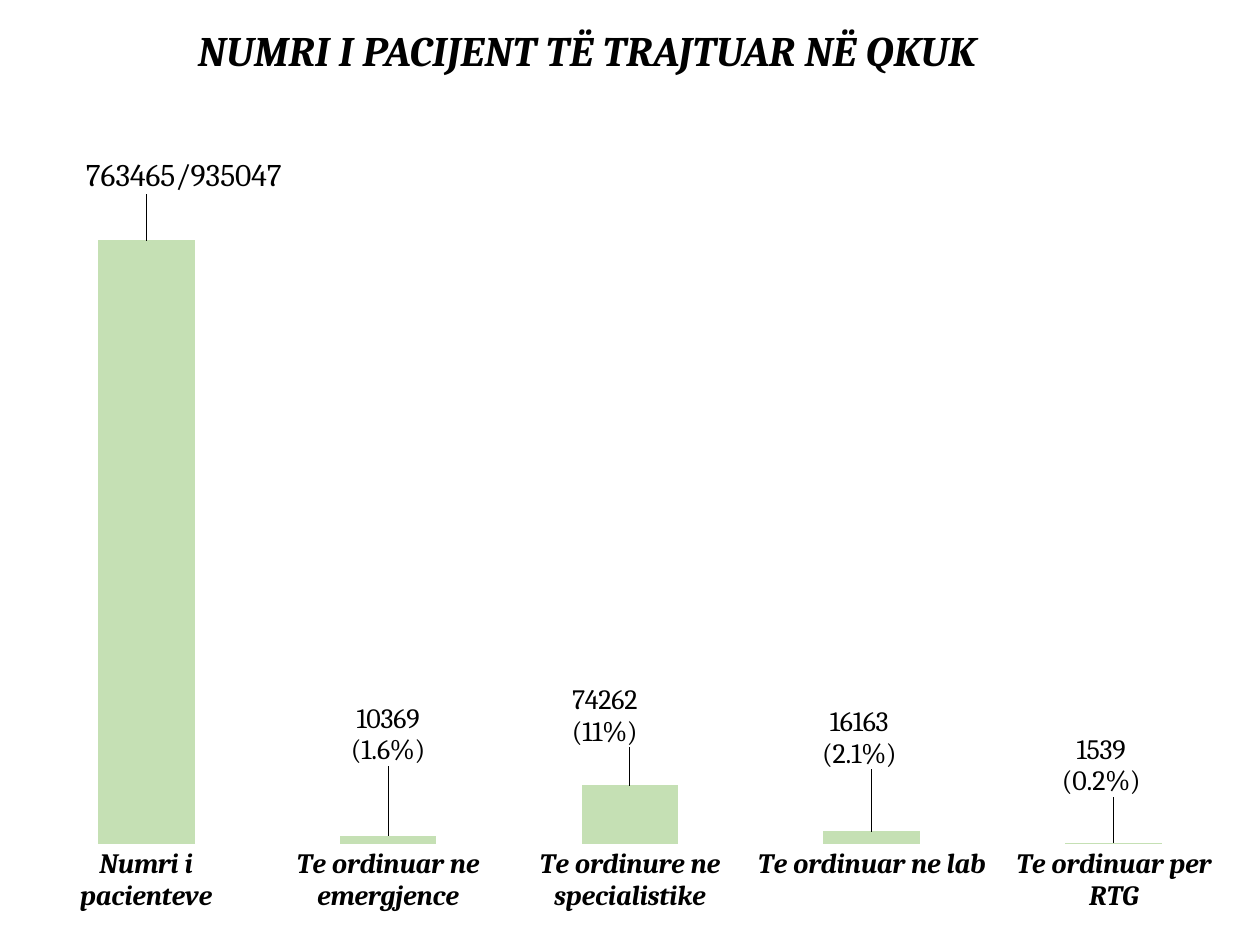
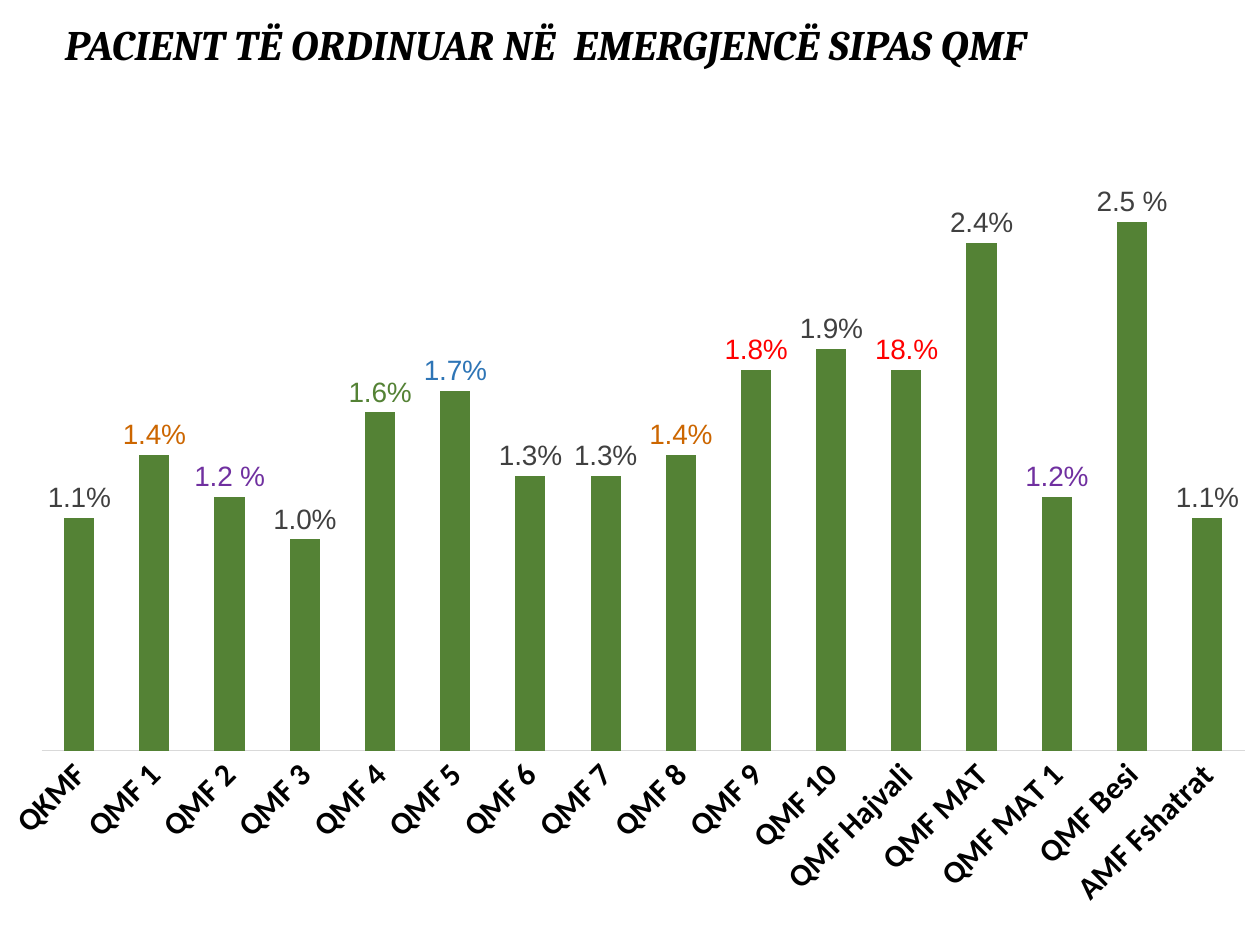
from dataclasses import dataclass

from lxml.etree import SubElement
from pptx import Presentation
from pptx.chart.data import CategoryChartData
from pptx.dml.color import RGBColor
from pptx.enum.chart import XL_CHART_TYPE, XL_LABEL_POSITION, XL_TICK_MARK
from pptx.enum.text import MSO_ANCHOR, MSO_AUTO_SIZE, PP_ALIGN
from pptx.oxml import parse_xml
from pptx.oxml.ns import nsdecls, qn
from pptx.util import Emu, Pt

PX_PER_INCH = 126
SLIDE_W, SLIDE_H = 1260, 945


@dataclass(frozen=True)
class Theme:
    serif: str = "Cambria"
    sans: str = "Calibri"
    label_sans: str = "Arial"
    black: str = "000000"
    grey: str = "404040"
    axis: str = "D9D9D9"
    light_green: str = "C5E0B4"
    green: str = "548235"
    orange: str = "CC6600"
    purple: str = "7030A0"
    blue: str = "2E75B6"
    red: str = "FF0000"
    title: int = 24
    large: int = 18
    body: int = 16
    small: int = 10


THEME = Theme()

# Category, patients, label, label size, label shift in px (right, down)
PATIENTS = [
    ("Numri i pacienteve", 763465, "763465/935047", THEME.large, (35, -40)),
    ("Te ordinuar ne emergjence", 10369, "10369\n(1.6%)", THEME.body, (0, -62)),
    ("Te ordinure ne specialistike", 74262, "74262\n(11%)", THEME.body, (-20, -30)),
    ("Te ordinuar ne lab", 16163, "16163\n(2.1%)", THEME.body, (-11, -58)),
    ("Te ordinuar per RTG", 1539, "1539\n(0.2%)", THEME.body, (-15, -40)),
]

# Centre, share in percent, label, label colour
EMERGENCY = [
    ("QKMF", 1.1, "1.1%", THEME.grey),
    ("QMF 1", 1.4, "1.4%", THEME.orange),
    ("QMF 2", 1.2, "1.2 %", THEME.purple),
    ("QMF 3", 1.0, "1.0%", THEME.grey),
    ("QMF 4", 1.6, "1.6%", THEME.green),
    ("QMF 5", 1.7, "1.7%", THEME.blue),
    ("QMF 6", 1.3, "1.3%", THEME.grey),
    ("QMF 7", 1.3, "1.3%", THEME.grey),
    ("QMF 8", 1.4, "1.4%", THEME.orange),
    ("QMF 9", 1.8, "1.8%", THEME.red),
    ("QMF 10", 1.9, "1.9%", THEME.grey),
    ("QMF Hajvali", 1.8, "18.%", THEME.red),
    ("QMF MAT", 2.4, "2.4%", THEME.grey),
    ("QMF MAT 1", 1.2, "1.2%", THEME.purple),
    ("QMF Besi", 2.5, "2.5 %", THEME.grey),
    ("AMF Fshatrat", 1.1, "1.1%", THEME.grey),
]


def px(n):
    return Emu(round(n * 914400 / PX_PER_INCH))


def style_font(font, name, size, color=THEME.black, bold=False, italic=False):
    font.name, font.size = name, Pt(size)
    font.bold, font.italic = bold, italic
    font.color.rgb = RGBColor.from_string(color)


def add_titled_slide(prs, title, box, indent):
    """Add a title-only slide with its title in box, indented from the left."""
    s = prs.slides.add_slide(prs.slide_layouts[5])
    sp = s.shapes.title
    sp.left, sp.top, sp.width, sp.height = map(px, box)
    tf = sp.text_frame
    tf.text = title
    tf.word_wrap, tf.auto_size = True, MSO_AUTO_SIZE.NONE
    tf.vertical_anchor = MSO_ANCHOR.MIDDLE
    tf.margin_left = px(indent)
    p = tf.paragraphs[0]
    p.alignment, p.line_spacing = PP_ALIGN.LEFT, 0.9
    style_font(p.runs[0].font, THEME.serif, THEME.title, bold=True, italic=True)
    return s


def manual_layout(x, y, **extra):
    """Build a chart layout element; extra holds modes and sizes."""
    layout = parse_xml(f"<c:layout {nsdecls('c')}><c:manualLayout/></c:layout>")
    values = {**extra, "x": x, "y": y}
    for tag in ("layoutTarget", "xMode", "yMode", "x", "y", "w", "h"):
        if tag in values:
            SubElement(layout[0], qn(f"c:{tag}")).set("val", str(values[tag]))
    return layout


def set_plot_area(chart, x, y, w, h):
    area = chart._chartSpace.chart.plotArea
    for old in area.findall(qn("c:layout")):
        area.remove(old)
    area.insert(0, manual_layout(x, y, w=w, h=h, layoutTarget="inner",
                                 xMode="edge", yMode="edge"))


def add_columns(s, box, rows, color, top_value, plot_area):
    """Add a one-series column chart without value axis, grid or legend."""
    data = CategoryChartData()
    data.categories = [row[0] for row in rows]
    data.add_series("Series 1", [row[1] for row in rows])
    chart = s.shapes.add_chart(XL_CHART_TYPE.COLUMN_CLUSTERED, *map(px, box), data).chart
    chart.has_legend = chart.has_title = False
    style_font(chart.font, THEME.sans, THEME.small)
    plot = chart.plots[0]
    plot.gap_width, plot.vary_by_categories = 150, False
    fill = plot.series[0].format.fill
    fill.solid()
    fill.fore_color.rgb = RGBColor.from_string(color)
    values = chart.value_axis
    values.visible = values.has_major_gridlines = False
    values.minimum_scale, values.maximum_scale = 0, top_value
    chart.category_axis.major_tick_mark = XL_TICK_MARK.NONE
    set_plot_area(chart, *plot_area)
    return chart


def show_values(chart, font_name, color, number_format):
    labels = chart.plots[0].series[0].data_labels
    labels.show_value = True
    labels.number_format, labels.number_format_is_linked = number_format, False
    labels.position = XL_LABEL_POSITION.OUTSIDE_END
    style_font(labels.font, font_name, THEME.body, color, bold=True)


def label_point(chart, index, text, font_name, size, color):
    """Give one column its own label text and return the label element."""
    series = chart.plots[0].series[0]
    label = series.points[index].data_label
    tf = label.text_frame
    tf.text = text
    for p in tf.paragraphs:
        for r in p.runs:
            style_font(r.font, font_name, size, color)
    label.position = XL_LABEL_POSITION.OUTSIDE_END
    return series._element.xpath("c:dLbls/c:dLbl")[index]


def add_patients_slide(prs):
    s = add_titled_slide(prs, "NUMRI I PACIJENT TË TRAJTUAR NË QKUK",
                         (0, 0, SLIDE_W, 105), 198)
    box = (0, 116, SLIDE_W, 809)
    chart = add_columns(s, box, PATIENTS, THEME.light_green, 900000,
                        (0.02, 0.02, 0.96, 0.88))
    axis = chart.category_axis
    axis.format.line.fill.background()
    style_font(axis.tick_labels.font, THEME.serif, THEME.body, bold=True, italic=True)
    show_values(chart, THEME.serif, THEME.black, "General")
    for i, (_, _, text, size, (dx, dy)) in enumerate(PATIENTS):
        label = label_point(chart, i, text, THEME.serif, size, THEME.black)
        label.insert(1, manual_layout(round(dx / box[2], 2), round(dy / box[3], 2)))


def add_emergency_slide(prs):
    s = add_titled_slide(prs, "PACIENT TË ORDINUAR NË  EMERGJENCË SIPAS QMF",
                         (53, 0, 1086, 94), 12)
    chart = add_columns(s, (0, 94, SLIDE_W, 851), EMERGENCY, THEME.green, 3,
                        (0.033, 0.026, 0.955, 0.746))
    chart.plots[0].overlap = -25
    axis = chart.category_axis
    axis.format.line.color.rgb = RGBColor.from_string(THEME.axis)
    axis.format.line.width = Pt(0.75)
    style_font(axis.tick_labels.font, THEME.sans, THEME.large, bold=True)
    # Names slant upwards by 45 degrees
    axis._element.xpath("c:txPr/a:bodyPr")[0].set("rot", str(-45 * 60000))
    show_values(chart, THEME.label_sans, THEME.grey, "0.0")
    for i, (_, _, text, color) in enumerate(EMERGENCY):
        label_point(chart, i, text, THEME.label_sans, THEME.body, color)


def main():
    prs = Presentation()
    prs.slide_width, prs.slide_height = px(SLIDE_W), px(SLIDE_H)
    add_patients_slide(prs)
    add_emergency_slide(prs)
    prs.save("out.pptx")


if __name__ == "__main__":
    main()
